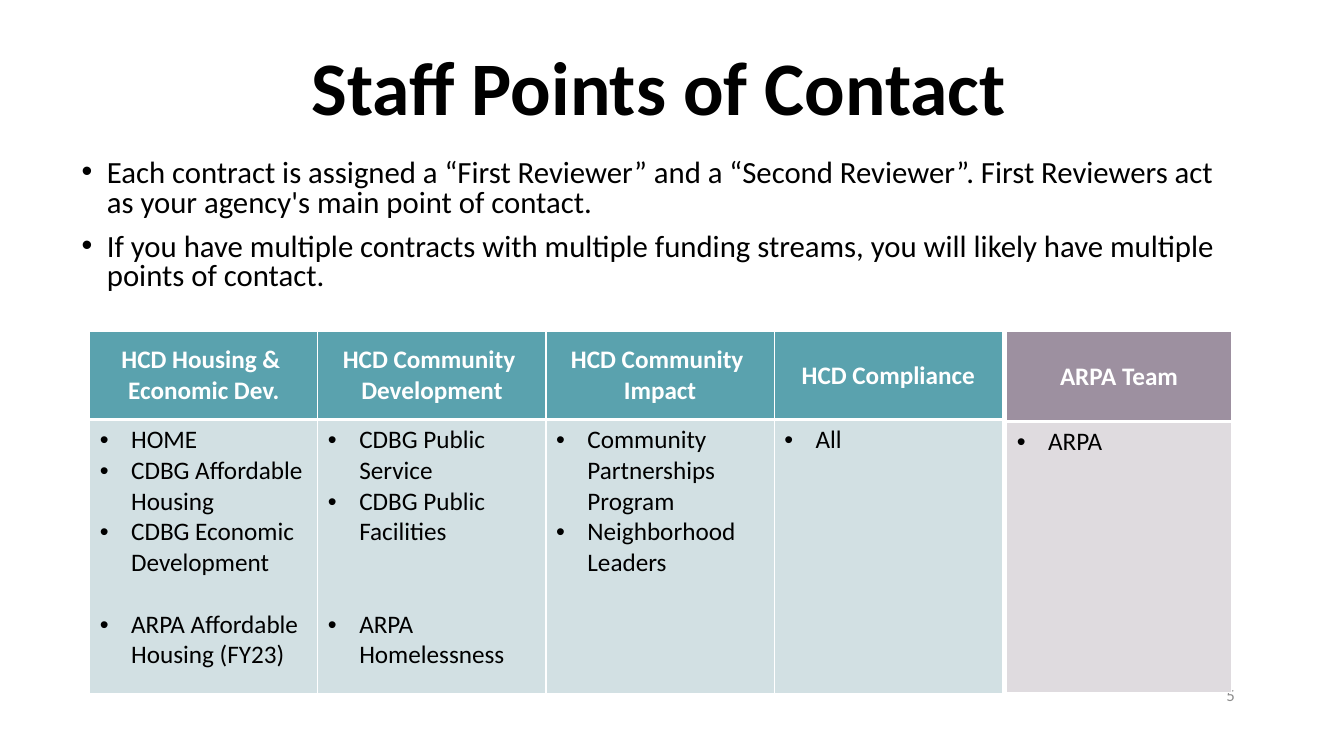
"""Build the slide that lists the staff points of contact."""
from lxml.etree import SubElement
from pptx import Presentation
from pptx.dml.color import RGBColor
from pptx.enum.text import MSO_ANCHOR, MSO_AUTO_SIZE, PP_ALIGN
from pptx.oxml.ns import qn
from pptx.util import Cm, Pt

BLACK = RGBColor(0x00, 0x00, 0x00)
WHITE = RGBColor(0xFF, 0xFF, 0xFF)
GRAY = RGBColor(0x8C, 0x8C, 0x8C)
TEAL = RGBColor(0x5A, 0xA2, 0xAE)
PALE_TEAL = RGBColor(0xD2, 0xE0, 0xE3)
MAUVE = RGBColor(0x9D, 0x90, 0xA0)
PALE_MAUVE = RGBColor(0xDF, 0xDB, 0xDF)

BLANK_LINE = 22
BULLETS = [
    "Each contract is assigned a “First Reviewer” and a “Second Reviewer”. "
    "First Reviewers act as your agency's main point of contact.",
    "If you have multiple contracts with multiple funding streams, "
    "you will likely have multiple points of contact.",
]
HCD_TEAMS = [
    (["HCD Housing & ", "Economic Dev."],
     [("HOME", 0), ("CDBG Affordable Housing", 0), ("CDBG Economic Development", 0),
      ("ARPA Affordable Housing (FY23)", BLANK_LINE)]),
    (["HCD Community ", "Development"],
     [("CDBG Public Service", 0), ("CDBG Public Facilities", 0),
      ("ARPA Homelessness", 2 * BLANK_LINE)]),
    (["HCD Community ", "Impact"],
     [("Community Partnerships Program", 0), ("Neighborhood Leaders", 0)]),
    (["HCD Compliance"], [("All", 0)]),
]
ARPA_TEAMS = [(["ARPA Team"], [("ARPA", 0)])]
TABLES = [
    (HCD_TEAMS, 2.26, 5.75, (2.21, 6.91), TEAL, PALE_TEAL),
    (ARPA_TEAMS, 25.37, 5.66, (2.26, 6.83), MAUVE, PALE_MAUVE),
]


def write_paragraphs(text_frame, lines, font_format, paragraph_format, indent=0):
    """Fill a text frame with formatted lines, bulleted when indented."""
    for index, (text, space_before) in enumerate(lines):
        paragraph = text_frame.paragraphs[0] if index == 0 else text_frame.add_paragraph()
        run = paragraph.add_run()
        run.text = text
        run.font.name = "Calibri"
        run.font.color.rgb = font_format["color"]
        for name in ("size", "bold"):
            setattr(run.font, name, font_format[name])
        for name, value in paragraph_format.items():
            setattr(paragraph, name, value)
        paragraph.space_before = Pt(space_before)
        if indent:
            properties = paragraph._p.get_or_add_pPr()
            properties.set("marL", str(Cm(indent)))
            properties.set("indent", str(-Cm(indent)))
            SubElement(properties, qn("a:buFont"), typeface="Arial")
            SubElement(properties, qn("a:buChar"), char="•")


def style_cell(cell, color, border_widths):
    """Give a cell white borders and a solid fill."""
    properties = cell._tc.get_or_add_tcPr()
    for side, width in zip(("lnL", "lnR", "lnT", "lnB"), border_widths):
        line = SubElement(properties, qn(f"a:{side}"), w=str(Pt(width)))
        fill = SubElement(line, qn("a:solidFill"))
        SubElement(fill, qn("a:srgbClr"), val=str(WHITE))
    cell.fill.solid()
    cell.fill.fore_color.rgb = color


presentation = Presentation()
presentation.slide_width = Cm(33.87)
presentation.slide_height = Cm(19.05)
slide = presentation.slides.add_slide(presentation.slide_layouts[1])
title = slide.shapes.title
body = slide.placeholders[1]
page_number = slide.shapes.add_textbox(Cm(23.75), Cm(16.99), Cm(7.62), Cm(1.02))

placements = [(title, (2, 0.46, 29.21, 3.68)), (body, (1.8, 3.91, 29.24, 3.71))]
for shape, lengths in placements:
    for name, length in zip(("left", "top", "width", "height"), lengths):
        setattr(shape, name, Cm(length))

frame_formats = [(title, MSO_ANCHOR.MIDDLE), (body, MSO_ANCHOR.TOP),
                 (page_number, MSO_ANCHOR.MIDDLE)]
for shape, anchor in frame_formats:
    frame_format = {"word_wrap": True, "auto_size": MSO_AUTO_SIZE.NONE,
                    "vertical_anchor": anchor}
    for name, value in frame_format.items():
        setattr(shape.text_frame, name, value)

write_paragraphs(title.text_frame, [("Staff Points of Contact", 0)],
                 {"size": Pt(54), "bold": True, "color": BLACK},
                 {"alignment": PP_ALIGN.CENTER, "line_spacing": 0.9})
write_paragraphs(body.text_frame, [(text, 10) for text in BULLETS],
                 {"size": Pt(22), "bold": False, "color": BLACK},
                 {"alignment": PP_ALIGN.LEFT, "line_spacing": 0.8}, indent=0.64)
write_paragraphs(page_number.text_frame, [("5", 0)],
                 {"size": Pt(12), "bold": False, "color": GRAY},
                 {"alignment": PP_ALIGN.RIGHT})

for teams, left, column_width, row_heights, header_color, list_color in TABLES:
    table = slide.shapes.add_table(2, len(teams), Cm(left), Cm(8.36),
                                   Cm(column_width * len(teams)), Cm(sum(row_heights))).table
    for row, height in zip(table.rows, row_heights):
        row.height = Cm(height)
    for column, (heading, programs) in enumerate(teams):
        table.columns[column].width = Cm(column_width)
        header_cell = table.cell(0, column)
        list_cell = table.cell(1, column)
        style_cell(header_cell, header_color, (1, 1, 1, 3))
        style_cell(list_cell, list_color, (1, 1, 3, 1))
        header_cell.vertical_anchor = MSO_ANCHOR.MIDDLE
        write_paragraphs(header_cell.text_frame, [(text, 0) for text in heading],
                         {"size": Pt(18), "bold": True, "color": WHITE},
                         {"alignment": PP_ALIGN.CENTER})
        write_paragraphs(list_cell.text_frame, programs,
                         {"size": Pt(18), "bold": False, "color": BLACK},
                         {"alignment": PP_ALIGN.LEFT}, indent=0.79)

presentation.save("out.pptx")
